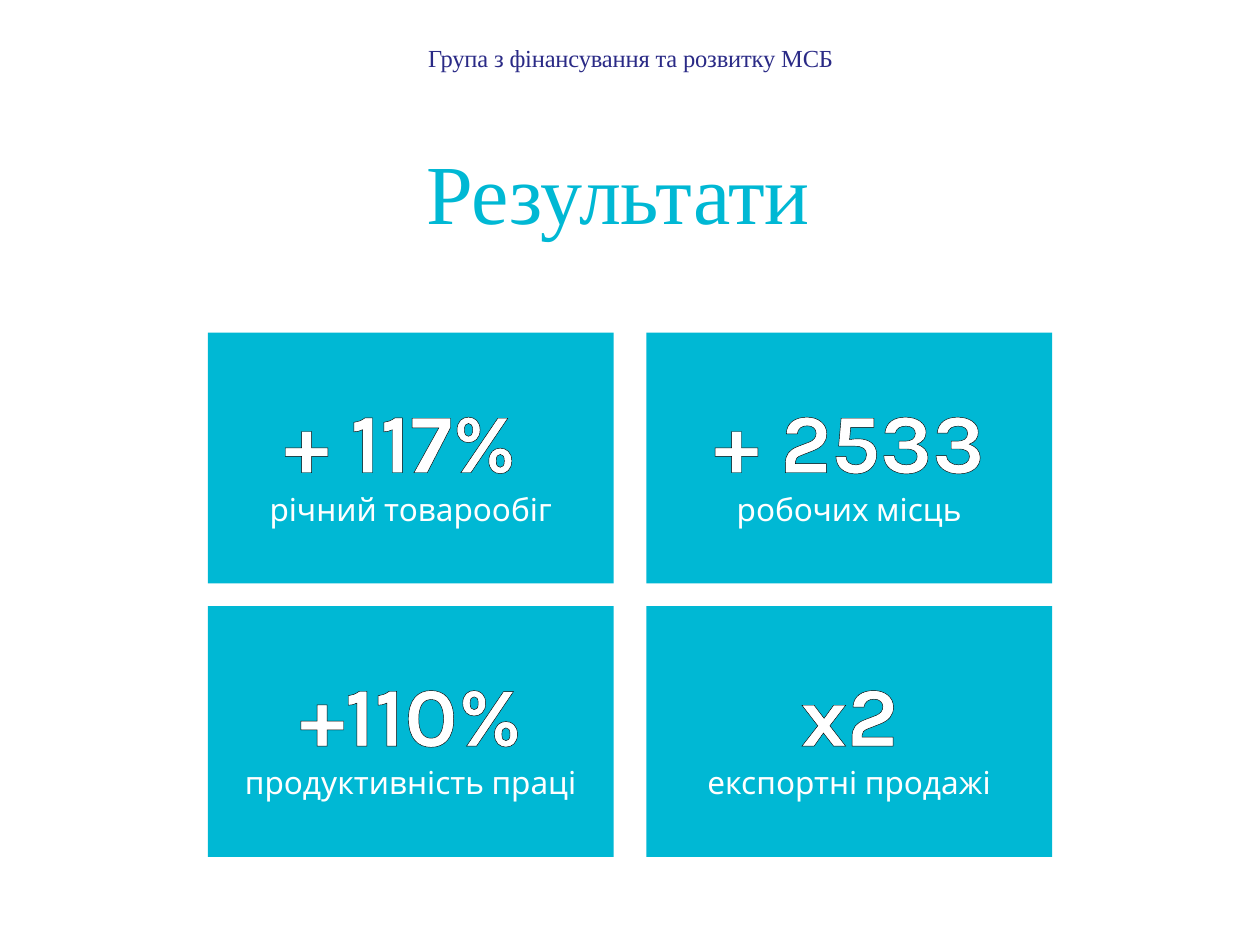
from typing import NamedTuple

from pptx import Presentation
from pptx.dml.color import RGBColor
from pptx.enum.shapes import MSO_SHAPE as Shape
from pptx.enum.text import MSO_ANCHOR as Anchor, PP_ALIGN as Align
from pptx.oxml import parse_xml
from pptx.oxml.ns import nsdecls
from pptx.util import Inches, Pt

COLORS = {"cyan": "00B8D4", "navy": "2A2A86", "white": "FFFFFF", "black": "000000"}
SERIF, SANS = "Times New Roman", "Karla"

CARD_LEFT, CARD_TOP = 1.65, 2.64
CARD_WIDTH, CARD_HEIGHT = 3.22, 1.99
COLUMN_STEP, ROW_STEP = 3.48, 2.17
COLUMNS = 2


class Card(NamedTuple):
    figure: str
    label: str


CARDS = [
    Card("+ 117% ", "річний товарообіг"),
    Card("+ 2533", "робочих місць"),
    Card("+110%", "продуктивність праці"),
    Card("x2", "експортні продажі"),
]


def color(name: str) -> RGBColor:
    return RGBColor.from_string(COLORS[name])


def write(paragraph, text: str, *, size: float, font: str, fill: str,
          bold: bool = False, line_spacing: float | None = None,
          space_after: float | None = None, tracking: float | None = None,
          outline: str | None = None) -> None:
    """Fill a paragraph with one centred, formatted run."""
    paragraph.alignment = Align.CENTER
    if line_spacing is not None:
        paragraph.line_spacing = Pt(line_spacing)
    if space_after is not None:
        paragraph.space_after = Pt(space_after)
    run = paragraph.add_run()
    run.text = text
    run.font.size = Pt(size)
    run.font.name = font
    run.font.bold = bold
    run.font.color.rgb = color(fill)
    properties = run.font._element
    if tracking is not None:
        properties.set("spc", str(round(tracking * 100)))
    if outline:
        properties.insert(0, parse_xml(
            f'<a:ln {nsdecls("a")} w="{Pt(0.75)}"><a:solidFill>'
            f'<a:srgbClr val="{COLORS[outline]}"/></a:solidFill></a:ln>'))


def prepare_frame(shape, left: float, top: float, width: float, height: float):
    """Place a text shape and clear its margins."""
    shape.left, shape.top = Inches(left), Inches(top)
    shape.width, shape.height = Inches(width), Inches(height)
    frame = shape.text_frame
    frame.word_wrap = True
    frame.vertical_anchor = Anchor.TOP
    frame.margin_left = frame.margin_right = 0
    frame.margin_top = frame.margin_bottom = 0
    return frame


def draw_card(shapes, card: Card, left: float, top: float) -> None:
    shape = shapes.add_shape(Shape.RECTANGLE, Inches(left), Inches(top),
                             Inches(CARD_WIDTH), Inches(CARD_HEIGHT))
    shape.shadow.inherit = False
    shape.fill.solid()
    shape.fill.fore_color.rgb = color("cyan")
    shape.line.fill.background()
    frame = shape.text_frame
    frame.word_wrap = True
    frame.vertical_anchor = Anchor.MIDDLE
    write(frame.paragraphs[0], card.figure, size=48, font=SANS, fill="white",
          bold=True, outline="black")
    write(frame.add_paragraph(), card.label, size=18, font=SANS, fill="white")


def main() -> None:
    presentation = Presentation()
    presentation.slide_width, presentation.slide_height = Inches(10), Inches(7.5)
    slide = presentation.slides.add_slide(presentation.slide_layouts[5])

    # Header line
    header = slide.shapes.add_textbox(0, 0, 0, 0)
    frame = prepare_frame(header, 3.09, 0.34, 3.83, 0.55)
    write(frame.paragraphs[0], "Група з фінансування та розвитку МСБ", size=14,
          font=SERIF, fill="navy", line_spacing=16.8, tracking=-0.1)

    # Title
    frame = prepare_frame(slide.shapes.title, 0.3, 1.16, 9.21, 1.09)
    write(frame.paragraphs[0], "Результати", size=48, font=SERIF, fill="cyan",
          line_spacing=54.6, space_after=9, tracking=-0.1)

    # Result cards in a two-column grid
    group = slide.shapes.add_group_shape()
    for index, card in enumerate(CARDS):
        row, column = divmod(index, COLUMNS)
        draw_card(group.shapes, card, CARD_LEFT + column * COLUMN_STEP,
                  CARD_TOP + row * ROW_STEP)

    presentation.save("out.pptx")


if __name__ == "__main__":
    main()
